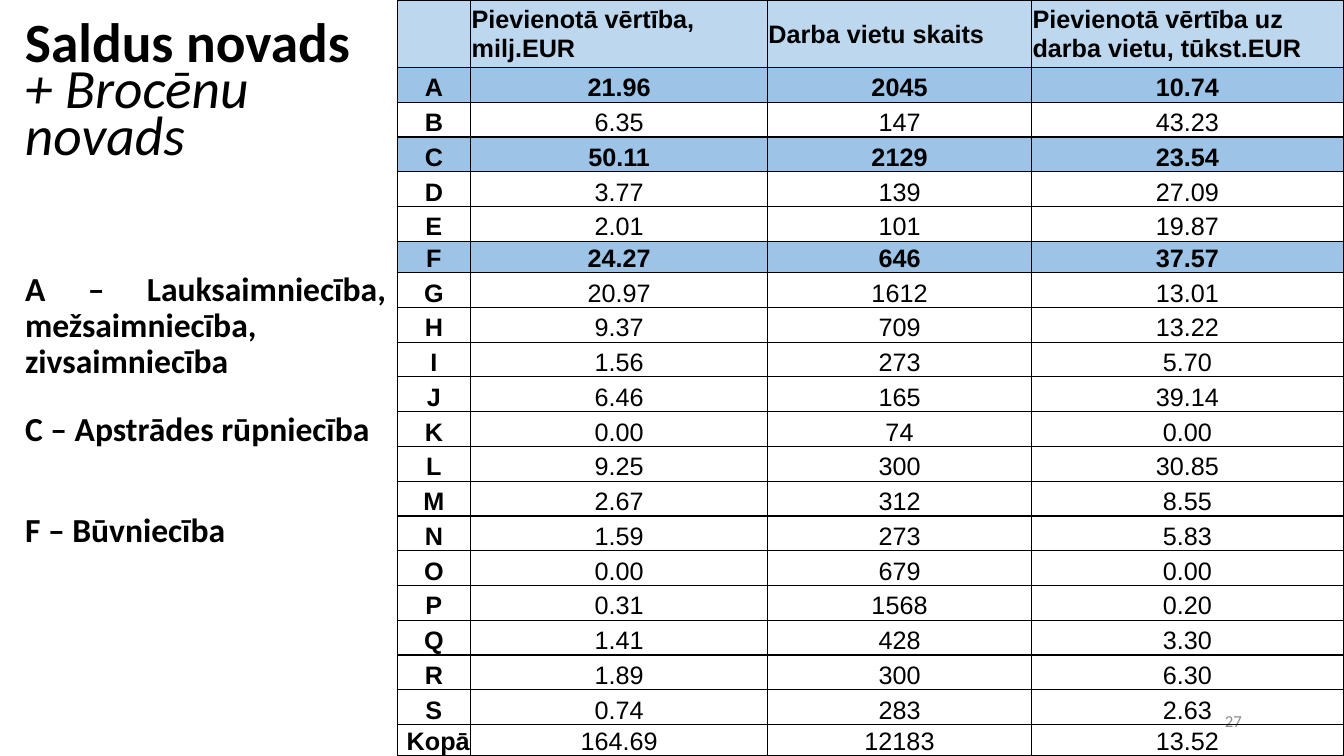
import dataclasses
import typing

import lxml.etree
import pptx
import pptx.dml.color
import pptx.enum.text
import pptx.oxml.ns
import pptx.slide
import pptx.table
import pptx.text.text
import pptx.util

PX = 4572  # EMU per px, 200 px to the inch
BLACK = pptx.dml.color.RGBColor(0x00, 0x00, 0x00)
GREY = pptx.dml.color.RGBColor(0x8C, 0x8C, 0x8C)
PALE = pptx.dml.color.RGBColor(0xBD, 0xD7, 0xEE)
BLUE = pptx.dml.color.RGBColor(0x9D, 0xC3, 0xE6)
ALIGN = pptx.enum.text.PP_ALIGN
ANCHOR = pptx.enum.text.MSO_ANCHOR
PLAIN = "{2D5ABB26-0587-4C30-8999-92F81FD0307C}"  # table style without grid


@dataclasses.dataclass(frozen=True)
class Run:
    text: str
    size: float
    font: str = "Calibri"
    bold: bool = False
    slant: bool = False
    color: pptx.dml.color.RGBColor = BLACK


@dataclasses.dataclass(frozen=True)
class Box:
    left: int
    top: int
    width: int
    height: int
    runs: tuple[Run, ...]
    align: ALIGN = ALIGN.JUSTIFY
    space: float = 0.9
    anchor: ANCHOR = ANCHOR.TOP


class Row(typing.NamedTuple):
    code: str
    value: str
    jobs: str
    ratio: str


HEAD = Row("", "Pievienotā vērtība, milj.EUR", "Darba vietu skaits",
           "Pievienotā vērtība uz darba vietu, tūkst.EUR")
ROWS = (
    Row("A", "21.96", "2045", "10.74"),
    Row("B", "6.35", "147", "43.23"),
    Row("C", "50.11", "2129", "23.54"),
    Row("D", "3.77", "139", "27.09"),
    Row("E", "2.01", "101", "19.87"),
    Row("F", "24.27", "646", "37.57"),
    Row("G", "20.97", "1612", "13.01"),
    Row("H", "9.37", "709", "13.22"),
    Row("I", "1.56", "273", "5.70"),
    Row("J", "6.46", "165", "39.14"),
    Row("K", "0.00", "74", "0.00"),
    Row("L", "9.25", "300", "30.85"),
    Row("M", "2.67", "312", "8.55"),
    Row("N", "1.59", "273", "5.83"),
    Row("O", "0.00", "679", "0.00"),
    Row("P", "0.31", "1568", "0.20"),
    Row("Q", "1.41", "428", "3.30"),
    Row("R", "1.89", "300", "6.30"),
    Row("S", "0.74", "283", "2.63"),
    Row("Kopā", "164.69", "12183", "13.52"),
)
TOTAL = "Kopā"
MAIN = ("A", "C", "F")  # highlighted sectors
COLS = (146, 589, 524, 619)
LEFT = 788
TALL, HIGH, LOW = 134, 69, 62  # header, usual and shorter rows

PAGE = Box(1884, 1390, 600, 80, (Run("27", 12, color=GREY),),
           ALIGN.RIGHT, 1, ANCHOR.MIDDLE)
TITLE = Box(30, 40, 714, 336,
            (Run("Saldus novads ", 39.6, bold=True),
             Run("+ Brocēnu novads", 39.6, slant=True)), ALIGN.LEFT, 0.7)
NOTES = tuple(
    Box(30, top, 756, 116, (Run(text, 24, bold=True),))
    for top, text in (
        (530, "A – Lauksaimniecība, mežsaimniecība, zivsaimniecība"),
        (808, "C – Apstrādes rūpniecība"),
        (1008, "F – Būvniecība"),
    )
)


def add_run(para: pptx.text.text._Paragraph, item: Run) -> None:
    run = para.add_run()
    run.text = item.text
    run.font.size = pptx.util.Pt(item.size)
    run.font.name = item.font
    run.font.bold = item.bold
    run.font.italic = item.slant
    run.font.color.rgb = item.color


def add_box(slide: pptx.slide.Slide, box: Box) -> None:
    shape = slide.shapes.add_textbox(
        box.left * PX, box.top * PX, box.width * PX, box.height * PX)
    frame = shape.text_frame
    frame.word_wrap = True
    frame.vertical_anchor = box.anchor
    para = frame.paragraphs[0]
    para.alignment = box.align
    para.line_spacing = box.space
    for item in box.runs:
        add_run(para, item)


def add_edges(cell: pptx.table._Cell) -> None:
    props = cell._tc.get_or_add_tcPr()
    for side in ("a:lnL", "a:lnR", "a:lnT", "a:lnB"):
        line = lxml.etree.SubElement(
            props, pptx.oxml.ns.qn(side), w=str(pptx.util.Pt(1)))
        fill = lxml.etree.SubElement(line, pptx.oxml.ns.qn("a:solidFill"))
        lxml.etree.SubElement(
            fill, pptx.oxml.ns.qn("a:srgbClr"), val=str(BLACK))


def fill_cell(cell: pptx.table._Cell, row: Row, col: int) -> None:
    head = row is HEAD
    main = row.code in MAIN
    add_edges(cell)
    if head or main:
        cell.fill.solid()
        cell.fill.fore_color.rgb = PALE if head else BLUE
    else:
        cell.fill.background()
    cell.margin_left = cell.margin_right = cell.margin_top = 2 * PX
    cell.margin_bottom = 0
    cell.vertical_anchor = ANCHOR.MIDDLE if head else ANCHOR.BOTTOM
    para = cell.text_frame.paragraphs[0]
    if head:
        para.alignment = ALIGN.LEFT
    elif row.code == TOTAL and col == 0:
        para.alignment = ALIGN.RIGHT
    else:
        para.alignment = ALIGN.CENTER
    if row[col]:
        add_run(para, Run(row[col], 18, "Arial", head or main or col == 0))


def add_grid(slide: pptx.slide.Slide) -> None:
    rows = (HEAD, *ROWS)
    highs = [TALL if row is HEAD else LOW if row.code in ("F", TOTAL) else HIGH
             for row in rows]
    table = slide.shapes.add_table(
        len(rows), len(COLS), LEFT * PX, 0,
        sum(COLS) * PX, sum(highs) * PX).table
    table.first_row = table.horz_banding = False
    table._tbl.tblPr.find(pptx.oxml.ns.qn("a:tableStyleId")).text = PLAIN
    for col, width in enumerate(COLS):
        table.columns[col].width = width * PX
    for num, (row, high) in enumerate(zip(rows, highs)):
        table.rows[num].height = high * PX
        for col in range(len(COLS)):
            fill_cell(table.cell(num, col), row, col)


def main() -> None:
    deck = pptx.Presentation()
    deck.slide_width = 2667 * PX
    deck.slide_height = 1500 * PX
    slide = deck.slides.add_slide(deck.slide_layouts[6])
    # Page number lies behind the table
    add_box(slide, PAGE)
    # Sector table
    add_grid(slide)
    # Title and sector names
    for box in (TITLE, *NOTES):
        add_box(slide, box)
    deck.save("out.pptx")


if __name__ == "__main__":
    main()
